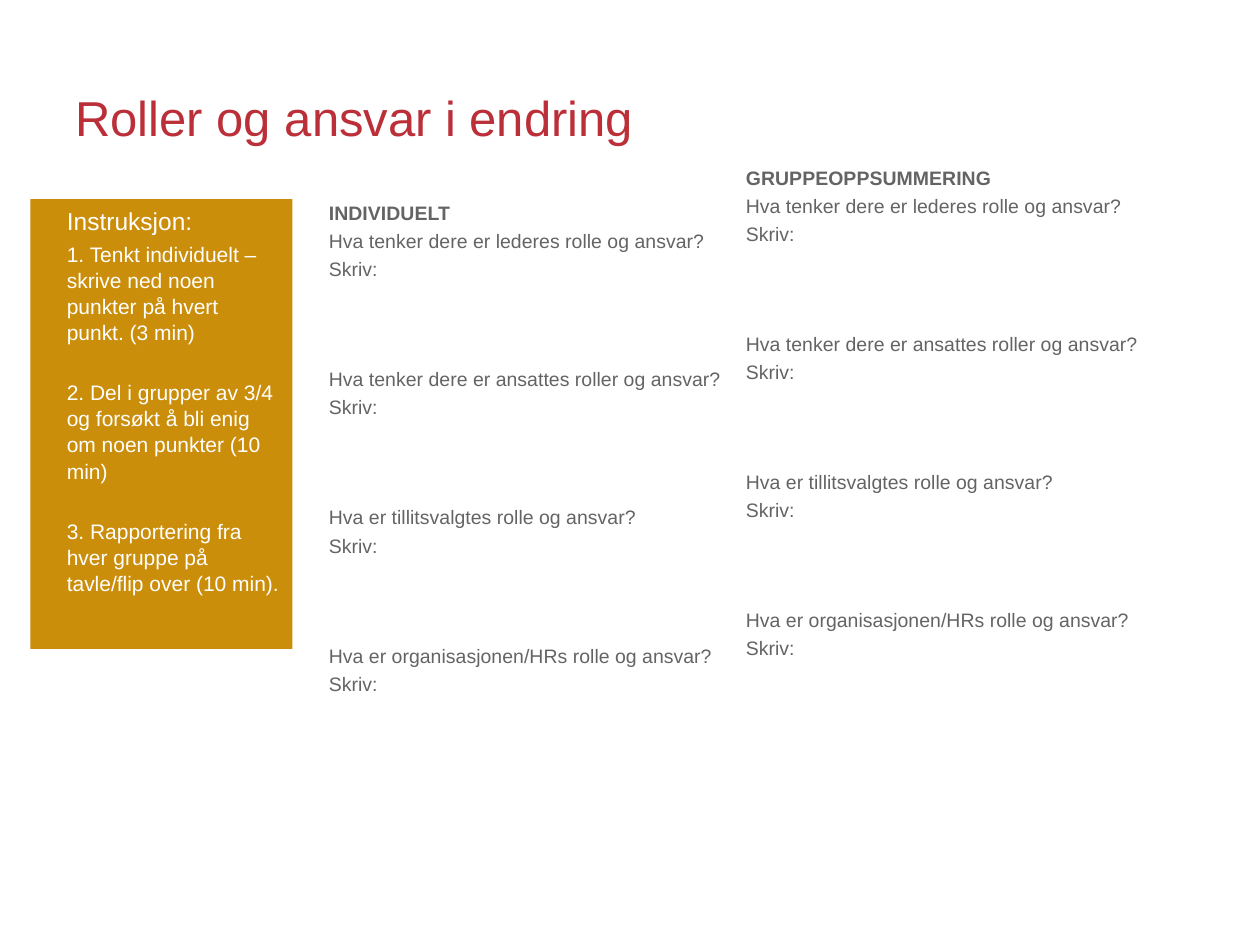
from dataclasses import dataclass
from typing import Optional

from pptx import Presentation
from pptx.dml.color import RGBColor
from pptx.enum import shapes, text
from pptx.util import Inches, Pt

RED, GOLD, GREY, WHITE = "BB2F38", "CB8E0B", "636463", "FFFFFF"
QUESTIONS = [
    "Hva tenker dere er lederes rolle og ansvar?",
    "Hva tenker dere er ansattes roller og ansvar?",
    "Hva er tillitsvalgtes rolle og ansvar?",
    "Hva er organisasjonen/HRs rolle og ansvar?",
]
STEPS = [
    "1. Tenkt individuelt – skrive ned noen punkter på hvert punkt. (3 min)",
    "2. Del i grupper av 3/4 og forsøkt å bli enig om noen punkter (10 min)",
    "3. Rapportering fra hver gruppe på tavle/flip over (10 min).",
]
INDENT = 0.19


@dataclass
class Line:
    words: str
    size: float
    before: float = 0
    bold: bool = False


@dataclass
class Panel:
    left: float
    top: float
    width: float
    height: float
    lines: list[Line]
    color: str
    fill: Optional[str] = None
    inset_x: float = 0.1
    inset_y: float = 0.05
    indent: float = INDENT
    spacing: float = 1.04
    anchor: text.MSO_ANCHOR = text.MSO_ANCHOR.TOP


def rgb(value: str) -> RGBColor:
    return RGBColor.from_string(value)


def worksheet(heading: str) -> list[Line]:
    """Heading, then each question with room for a written answer below it."""
    lines = [Line(heading, 11.1, bold=True)]
    for i, question in enumerate(QUESTIONS):
        lines += [Line(question, 11.1, 49 if i else 2.25), Line("Skriv:", 11.1, 2.25)]
    return lines


def instructions() -> list[Line]:
    steps = [Line(step, 12, 19.25 if i else 2.5) for i, step in enumerate(STEPS)]
    return [Line("Instruksjon:", 14)] + steps


def draw_panel(s, panel: Panel) -> None:
    box = [Inches(n) for n in (panel.left, panel.top, panel.width, panel.height)]
    if panel.fill:
        sp = s.shapes.add_shape(shapes.MSO_SHAPE.RECTANGLE, *box)
        sp.shadow.inherit = False
        sp.fill.solid()
        sp.fill.fore_color.rgb = rgb(panel.fill)
        sp.line.fill.background()
    else:
        sp = s.shapes.add_textbox(*box)

    tf = sp.text_frame
    frame_format = {
        "word_wrap": True,
        "vertical_anchor": panel.anchor,
        "margin_left": Inches(panel.inset_x + panel.indent),
        "margin_right": Inches(panel.inset_x),
        "margin_top": Inches(panel.inset_y),
        "margin_bottom": Inches(panel.inset_y),
    }
    for name, value in frame_format.items():
        setattr(tf, name, value)

    for i, line in enumerate(panel.lines):
        p = tf.add_paragraph() if i else tf.paragraphs[0]
        p.alignment = text.PP_ALIGN.LEFT
        p.line_spacing = panel.spacing
        if i:
            p.space_before = Pt(line.before)
        r = p.add_run()
        r.text = line.words
        for name, value in {"name": "Arial", "size": Pt(line.size), "bold": line.bold}.items():
            setattr(r.font, name, value)
        r.font.color.rgb = rgb(panel.color)


def main() -> None:
    prs = Presentation()
    prs.slide_width, prs.slide_height = Inches(10), Inches(7.5)
    s = prs.slides.add_slide(prs.slide_layouts[6])
    panels = [
        Panel(0.5, 0.3, 9, 1.25, [Line("Roller og ansvar i endring", 28)], RED,
              indent=0, spacing=1.0, anchor=text.MSO_ANCHOR.MIDDLE),
        Panel(2.32, 1.54, 7.28, 4.99, worksheet("INDIVIDUELT"), GREY),
        Panel(0.24, 1.58, 2.08, 3.57, instructions(), WHITE, fill=GOLD),
        Panel(5.73, 1.31, 4.27, 5.47, worksheet("GRUPPEOPPSUMMERING"), GREY,
              fill=WHITE, inset_x=0, inset_y=0),
    ]
    for panel in panels:
        draw_panel(s, panel)
    prs.save("out.pptx")


if __name__ == "__main__":
    main()
